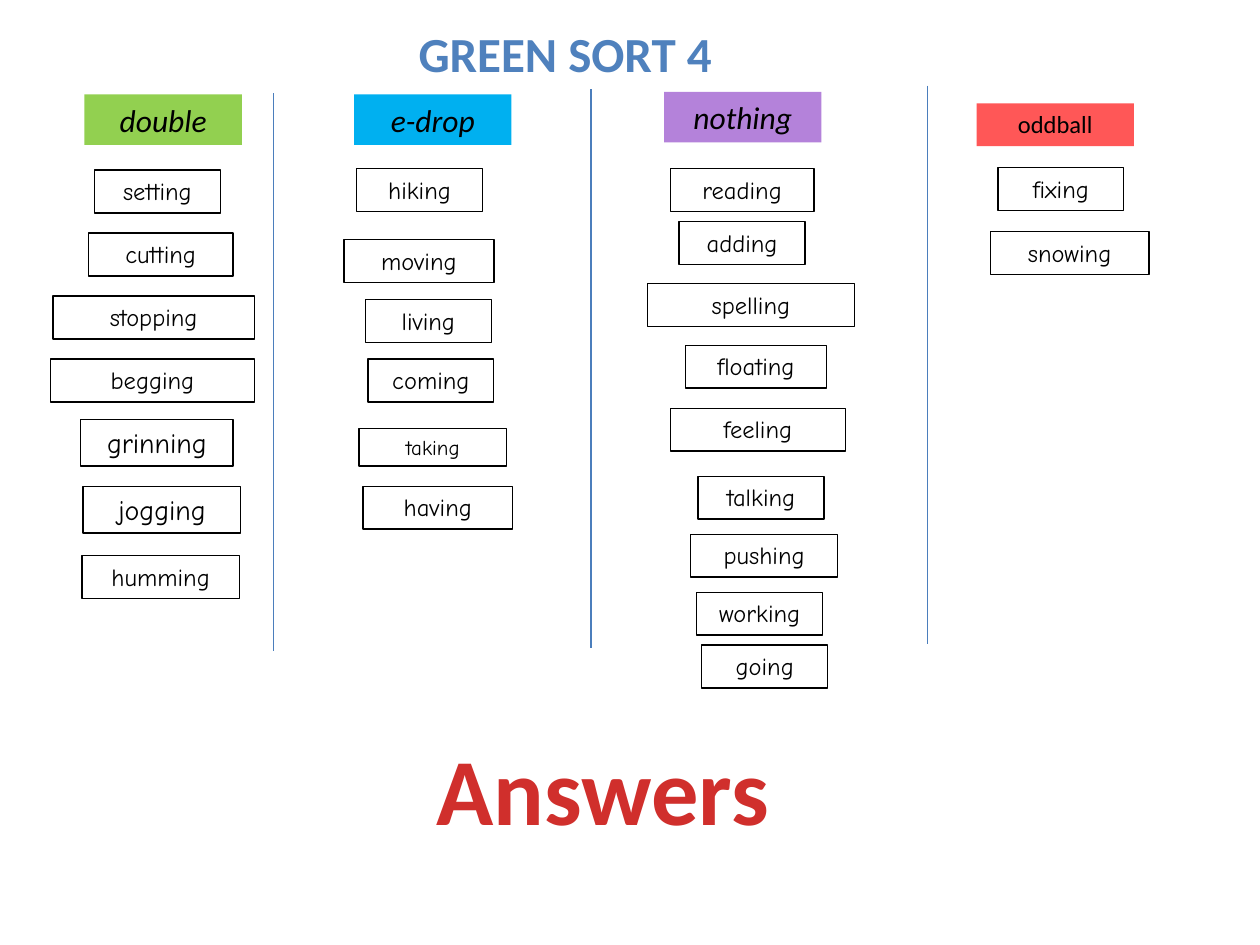
from typing import NamedTuple

from lxml import etree
from pptx import Presentation
from pptx import util as u
from pptx.dml.color import RGBColor
from pptx.enum import shapes, text
from pptx.oxml.ns import qn

# The slide is a grid of 100 columns by 75 rows
COLS, ROWS = 100, 75
SLIDE_W, SLIDE_H = u.Inches(10), u.Inches(7.5)
BLACK = "000000"
HEADING_FONT, WORD_FONT = "Calibri", "Comic Neue"
BOX_ROWS = {12: 3, 14: 3.4, 16: 3.7, 18: 4}  # box height for each text size


class Word(NamedTuple):
    label: str
    col: float
    row: float
    cols: float = 10
    size: int = 14


class Group(NamedTuple):
    heading: Word
    fill: str
    italic: bool
    words: list[Word]


class Divider(NamedTuple):
    col: float
    row: float
    rows: float = 44.3


GROUPS = [
    Group(Word("double", 6.7, 7.5, 12.5, 18), "92D050", True, [
        Word("setting", 7.5, 13.5),
        Word("cutting", 7, 18.5, 11.5),
        Word("stopping", 4.2, 23.5, 16),
        Word("begging", 4, 28.5, 16.2),
        Word("grinning", 6.4, 33.3, 12.1, 16),
        Word("jogging", 6.6, 38.6, 12.5, 16),
        Word("humming", 6.5, 44.1, 12.5),
    ]),
    Group(Word("e-drop", 28.1, 7.5, 12.5, 18), "00B0F0", True, [
        Word("hiking", 28.3, 13.4),
        Word("moving", 27.3, 19, 11.9),
        Word("living", 29, 23.8),
        Word("coming", 29.2, 28.5),
        Word("taking", 28.5, 34, 11.7, 12),
        Word("having", 28.8, 38.6, 11.9),
    ]),
    Group(Word("nothing", 52.7, 7.3, 12.5, 18), "B482DA", True, [
        Word("reading", 53.2, 13.4, 11.4),
        Word("adding", 53.9, 17.6),
        Word("spelling", 51.4, 22.5, 16.4),
        Word("floating", 54.4, 27.4, 11.2),
        Word("feeling", 53.2, 32.4, 13.9),
        Word("talking", 55.4, 37.8),
        Word("pushing", 54.8, 42.4, 11.7),
        Word("working", 55.3, 47),
        Word("going", 55.7, 51.2),
    ]),
    Group(Word("oddball", 77.5, 8.2, 12.5), "FF5757", False, [
        Word("fixing", 79.2, 13.3),
        Word("snowing", 78.6, 18.4, 12.6),
    ]),
]
DIVIDERS = [Divider(21.7, 7.4), Divider(46.9, 7.1), Divider(73.6, 6.8)]


def x(cols: float) -> int:
    return round(SLIDE_W * cols / COLS)


def y(rows: float) -> int:
    return round(SLIDE_H * rows / ROWS)


def rgb(hex_color: str) -> RGBColor:
    return RGBColor.from_string(hex_color)


def write(sp, label: str, size: int, font: str, color: str = BLACK,
          bold: bool = False, italic: bool = False, wrap: bool = True) -> None:
    tf = sp.text_frame
    tf.word_wrap = wrap
    tf.auto_size = text.MSO_AUTO_SIZE.SHAPE_TO_FIT_TEXT
    tf.vertical_anchor = text.MSO_ANCHOR.TOP
    p = tf.paragraphs[0]
    p.alignment = text.PP_ALIGN.CENTER
    r = p.add_run()
    r.text = label
    r.font.name, r.font.size = font, u.Pt(size)
    r.font.bold, r.font.italic = bold, italic
    r.font.color.rgb = rgb(color)


def add_box(s, word: Word):
    sp = s.shapes.add_shape(shapes.MSO_SHAPE.RECTANGLE, x(word.col), y(word.row),
                            x(word.cols), y(BOX_ROWS[word.size]))
    sp.shadow.inherit = False
    return sp


def add_heading(s, group: Group) -> None:
    sp = add_box(s, group.heading)
    sp.fill.solid()
    sp.fill.fore_color.rgb = rgb(group.fill)
    sp.line.fill.background()
    write(sp, group.heading.label, group.heading.size, HEADING_FONT,
          italic=group.italic)


def add_word(s, word: Word) -> None:
    sp = add_box(s, word)
    sp.fill.background()
    sp.line.color.rgb = rgb(BLACK)
    sp.line.width = u.Pt(0.75)
    write(sp, word.label, word.size, WORD_FONT)


def add_divider(s, d: Divider) -> None:
    line = s.shapes.add_connector(shapes.MSO_CONNECTOR.STRAIGHT, x(d.col), y(d.row),
                                  x(d.col), y(d.row + d.rows))
    line.line.color.rgb = rgb("4B7EBC")
    line.line.width = u.Pt(0.75)
    etree.SubElement(line._element.spPr, qn("a:effectLst"))


def main() -> None:
    prs = Presentation()
    prs.slide_width, prs.slide_height = SLIDE_W, SLIDE_H
    s = prs.slides.add_slide(prs.slide_layouts[5])

    # Title
    title = s.shapes.title
    title.left, title.top = x(21.8), y(1.4)
    title.width, title.height = x(46.1), y(5.7)
    write(title, "GREEN SORT 4", 28, HEADING_FONT, "4F81BD", bold=True)

    # Columns of sorted words
    for d in DIVIDERS:
        add_divider(s, d)
    for group in GROUPS:
        add_heading(s, group)
        for word in group.words:
            add_word(s, word)

    # Caption
    caption = s.shapes.add_textbox(x(33.5), y(57.5), x(28.7), y(10.1))
    write(caption, "Answers", 54, HEADING_FONT, "D02F2C", bold=True, wrap=False)

    prs.save("out.pptx")


if __name__ == "__main__":
    main()
